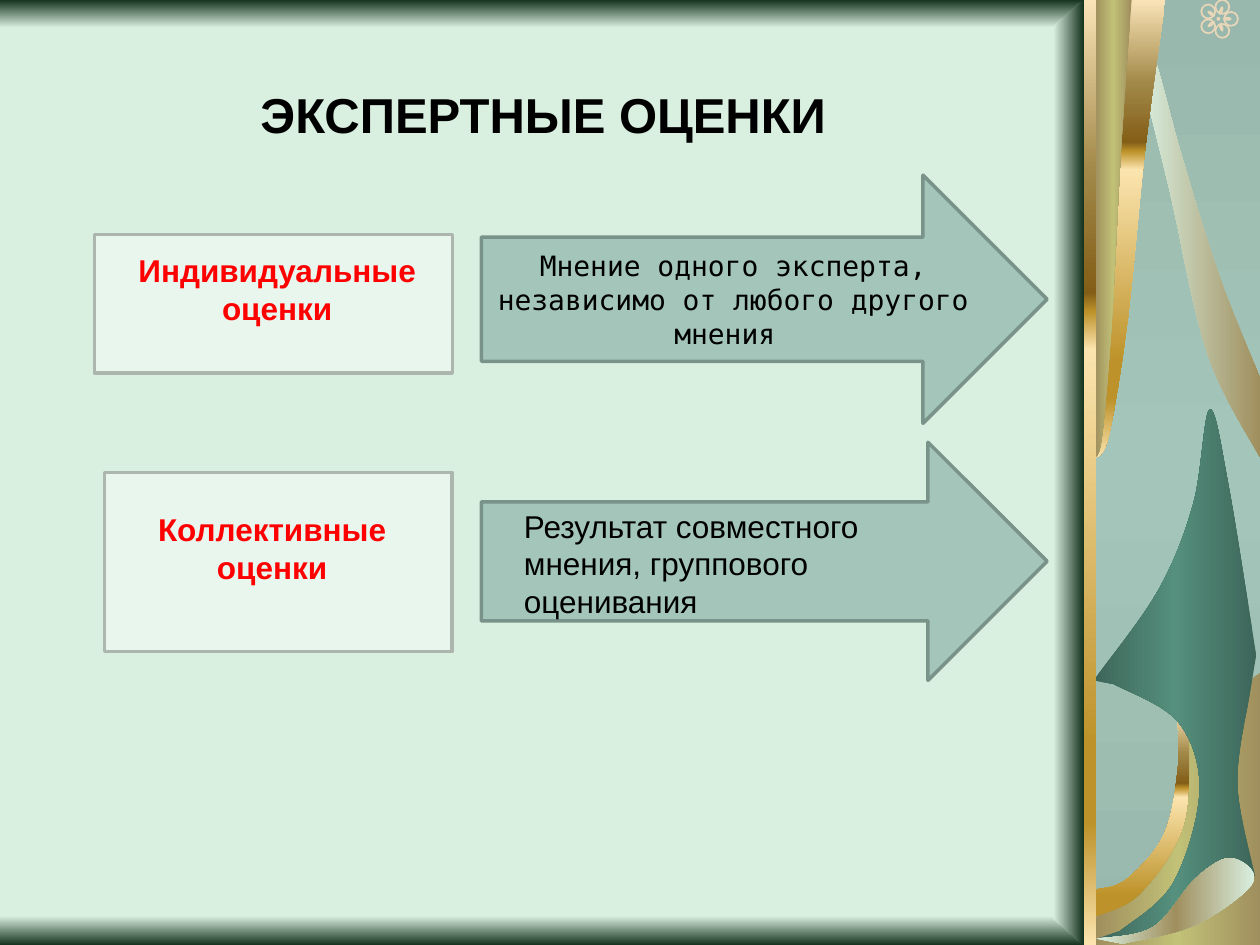
import math
from dataclasses import dataclass

from lxml import etree
from pptx import Presentation
from pptx import util as u
from pptx.dml.color import RGBColor
from pptx.enum import shapes, text
from pptx.oxml import ns

PX = 9144
WIDTH, HEIGHT = 1000, 750
CURVE_STEPS = 10

MINT = RGBColor.from_string("D9EFE0")
FOREST = RGBColor.from_string("15331E")
SAGE = RGBColor.from_string("A4C6BA")
SAGE_SHADE = RGBColor.from_string("99B8AD")
SAGE_EDGE = RGBColor.from_string("79928A")
PALE = RGBColor.from_string("E9F6ED")
PALE_EDGE = RGBColor.from_string("ACB6AF")
TEAL = RGBColor.from_string("558F7D")
TEAL_SHADE = RGBColor.from_string("3D6659")
KHAKI = RGBColor.from_string("A08F5E")
OLIVE = RGBColor.from_string("C1C177")
CREAM = RGBColor.from_string("FAE3B7")
BRONZE = RGBColor.from_string("A28949")
BROWN = RGBColor.from_string("835E17")
AMBER = RGBColor.from_string("BD922A")
STRAW = RGBColor.from_string("FBE4AE")
PETAL = RGBColor.from_string("E7D6B7")
RED = RGBColor.from_string("FF0000")
BLACK = RGBColor.from_string("000000")


@dataclass(frozen=True)
class Gradient:
    stops: tuple
    vertical: bool = False


@dataclass(frozen=True)
class Box:
    left: float
    top: float
    width: float
    height: float

    def emu(self) -> tuple:
        return tuple(round(v * PX) for v in (self.left, self.top, self.width, self.height))


@dataclass(frozen=True)
class Ribbon:
    strokes: tuple
    gradient: Gradient


@dataclass(frozen=True)
class Wording:
    content: str
    size: int = 18
    color: RGBColor = BLACK
    font: str = "Arial"
    bold: bool = False
    align: text.PP_ALIGN = text.PP_ALIGN.CENTER
    anchor: text.MSO_ANCHOR = text.MSO_ANCHOR.MIDDLE


def even(*colors: RGBColor, vertical: bool = False) -> Gradient:
    last = len(colors) - 1
    return Gradient(tuple((100 * i // last, color) for i, color in enumerate(colors)), vertical)


GOLD = Gradient(((0, CREAM), (18, BRONZE), (31, BROWN), (33, AMBER),
                 (37, STRAW), (79, AMBER), (87, AMBER), (100, STRAW)), True)
REED = even(KHAKI, OLIVE, KHAKI)


def curtain(spread: float, gradient: Gradient) -> Ribbon:
    edge = ((56, 0), (40, 118), (26, 254), (11, 346), (0, 364))
    curve = tuple((869 + spread * x, y) for x, y in edge)
    return Ribbon((curve, ((869, 0),)), gradient)


RING = Ribbon((((934, 564), (935, 608), (924, 662), (894, 698), (870, 706)),
               ((870, HEIGHT),), ((WIDTH, HEIGHT),), ((WIDTH, 564),)), GOLD)
STEM = Ribbon((((869, 728), (905, 710), (940, 655), (944, 576)),
               ((WIDTH, 534),), ((WIDTH, HEIGHT),), ((869, HEIGHT),)), REED)
LEAF = Ribbon((((868, 540), (919, 469), (947, 400), (960, 325), (975, 385), (997, 520)),
               ((992, 550), (982, 622), (996, 695)),
               ((971, 690), (934, 734), (871, 745)),
               ((889, 739), (931, 701), (952, 628), (935, 573), (884, 543))),
              even(TEAL_SHADE, TEAL, TEAL_SHADE))
BLADE = Ribbon((((905, 58), (914, 40), (938, 124), (968, 220), (WIDTH, 300)),
                ((WIDTH, 363), (958, 280), (928, 150), (905, 58))), even(MINT, KHAKI))
CURL = Ribbon((((870, 745), (915, 736), (949, 697), (977, 681), (995, 700),
                (949, 734), (891, 749)),), even(MINT, KHAKI, MINT))
BEVEL = Ribbon((((860, 0),), ((836, 21),), ((836, 729),), ((860, HEIGHT),)),
               even(MINT, FOREST))


def paint_gradient(shape, gradient: Gradient) -> None:
    shape.shadow.inherit = False
    shape.line.fill.background()
    shape.fill.background()
    blank = shape.element.spPr.find(ns.qn("a:noFill"))
    grad = etree.Element(ns.qn("a:gradFill"), rotWithShape="1")
    stops = etree.SubElement(grad, ns.qn("a:gsLst"))
    for position, color in gradient.stops:
        stop = etree.SubElement(stops, ns.qn("a:gs"), pos=f"{position}%".replace("%", "000"))
        etree.SubElement(stop, ns.qn("a:srgbClr"), val=str(color))
    angle = "5400000" if gradient.vertical else "0"
    etree.SubElement(grad, ns.qn("a:lin"), ang=angle, scaled="0")
    blank.getparent().replace(blank, grad)


def draw_band(slide, box: Box, gradient: Gradient) -> None:
    band = slide.shapes.add_shape(shapes.MSO_SHAPE.RECTANGLE, *box.emu())
    paint_gradient(band, gradient)


def smooth(knots: tuple) -> list:
    padded = (knots[0], *knots, knots[-1])
    points = [knots[0]]
    for before, start, end, after in zip(padded, padded[1:], padded[2:], padded[3:]):
        for step in range(1, CURVE_STEPS + 1):
            t = step / CURVE_STEPS
            points.append(tuple(
                b + t / 2 * (c - a + t * (2 * a - 5 * b + 4 * c - d + t * (3 * (b - c) + d - a)))
                for a, b, c, d in zip(before, start, end, after)))
    return points


def draw_ribbon(slide, ribbon: Ribbon) -> None:
    outline = [(x * PX, y * PX) for stroke in ribbon.strokes for x, y in smooth(stroke)]
    (x, y), *rest = outline
    builder = slide.shapes.build_freeform(round(x), round(y))
    builder.add_line_segments(rest, close=True)
    paint_gradient(builder.convert_to_shape(), ribbon.gradient)


def draw_oval(slide, x: float, y: float, width: int, height: int,
              angle: float = 0, hollow: bool = False) -> None:
    box = Box(x - width / 2, y - height / 2, width, height)
    oval = slide.shapes.add_shape(shapes.MSO_SHAPE.OVAL, *box.emu())
    oval.shadow.inherit = False
    oval.rotation = angle
    if hollow:
        oval.fill.background()
        oval.line.color.rgb = PETAL
        oval.line.width = u.Pt(1)
    else:
        oval.fill.solid()
        oval.fill.fore_color.rgb = PETAL
        oval.line.fill.background()


def draw_flower(slide, x: int, y: int) -> None:
    for angle in range(0, 360, 72):
        dx, dy = math.cos(math.radians(angle)), math.sin(math.radians(angle))
        draw_oval(slide, x + 10 * dx, y + 10 * dy, 11, 11, hollow=True)
        draw_oval(slide, x + 7 * dx, y + 7 * dy, 7, 3, angle)
    draw_oval(slide, x, y, 3, 3)


def write(shape, wording: Wording) -> None:
    frame = shape.text_frame
    frame.word_wrap = True
    frame.vertical_anchor = wording.anchor
    paragraph = frame.paragraphs[0]
    paragraph.alignment = wording.align
    run = paragraph.add_run()
    run.text = wording.content
    run.font.name = wording.font
    run.font.size = u.Pt(wording.size)
    run.font.bold = wording.bold
    run.font.color.rgb = wording.color


def draw_text(slide, box: Box, wording: Wording) -> None:
    write(slide.shapes.add_textbox(*box.emu()), wording)


def draw_panel(slide, kind: shapes.MSO_SHAPE, box: Box, fill: RGBColor, edge: RGBColor):
    panel = slide.shapes.add_shape(kind, *box.emu())
    panel.shadow.inherit = False
    panel.fill.solid()
    panel.fill.fore_color.rgb = fill
    panel.line.color.rgb = edge
    panel.line.width = u.Pt(2)
    return panel


def draw_card(slide, box: Box, label_box: Box, label: str) -> None:
    draw_panel(slide, shapes.MSO_SHAPE.RECTANGLE, box, PALE, PALE_EDGE)
    draw_text(slide, label_box, Wording(label, color=RED, bold=True))


def draw_arrow(slide, box: Box):
    return draw_panel(slide, shapes.MSO_SHAPE.RIGHT_ARROW, box, SAGE, SAGE_EDGE)


def main() -> None:
    deck = Presentation()
    deck.slide_width, deck.slide_height = WIDTH * PX, HEIGHT * PX
    slide = deck.slides.add_slide(deck.slide_layouts[6])
    slide.background.fill.solid()
    slide.background.fill.fore_color.rgb = MINT

    draw_band(slide, Box(0, 727, 884, 23), even(MINT, FOREST, vertical=True))
    draw_band(slide, Box(0, 0, 884, 22), even(FOREST, MINT, vertical=True))
    draw_band(slide, Box(870, 0, 130, HEIGHT), even(SAGE_SHADE, SAGE, SAGE_SHADE, vertical=True))
    draw_flower(slide, 967, 15)
    for ribbon in (RING, STEM, LEAF, BLADE, curtain(1, GOLD), curtain(0.52, REED)):
        draw_ribbon(slide, ribbon)
    draw_band(slide, Box(860, 0, 10, HEIGHT), GOLD)
    for ribbon in (CURL, BEVEL):
        draw_ribbon(slide, ribbon)

    draw_text(slide, Box(98, 36, 677, 83),
              Wording("ЭКСПЕРТНЫЕ ОЦЕНКИ ", 28, bold=True, anchor=text.MSO_ANCHOR.BOTTOM))
    draw_card(slide, Box(75, 186, 284, 110), Box(90, 194, 260, 71), "Индивидуальные оценки")
    write(draw_arrow(slide, Box(382, 139, 449, 197)),
          Wording("Мнение одного эксперта, независимо от любого другого мнения ",
                  16, font="DejaVu Sans Mono"))
    draw_arrow(slide, Box(382, 351, 449, 189))
    draw_card(slide, Box(83, 375, 276, 142), Box(106, 399, 220, 71), "Коллективные оценки")
    draw_text(slide, Box(406, 336, 331, 222),
              Wording("Результат совместного мнения, группового оценивания",
                      align=text.PP_ALIGN.LEFT))
    deck.save("out.pptx")


if __name__ == "__main__":
    main()
